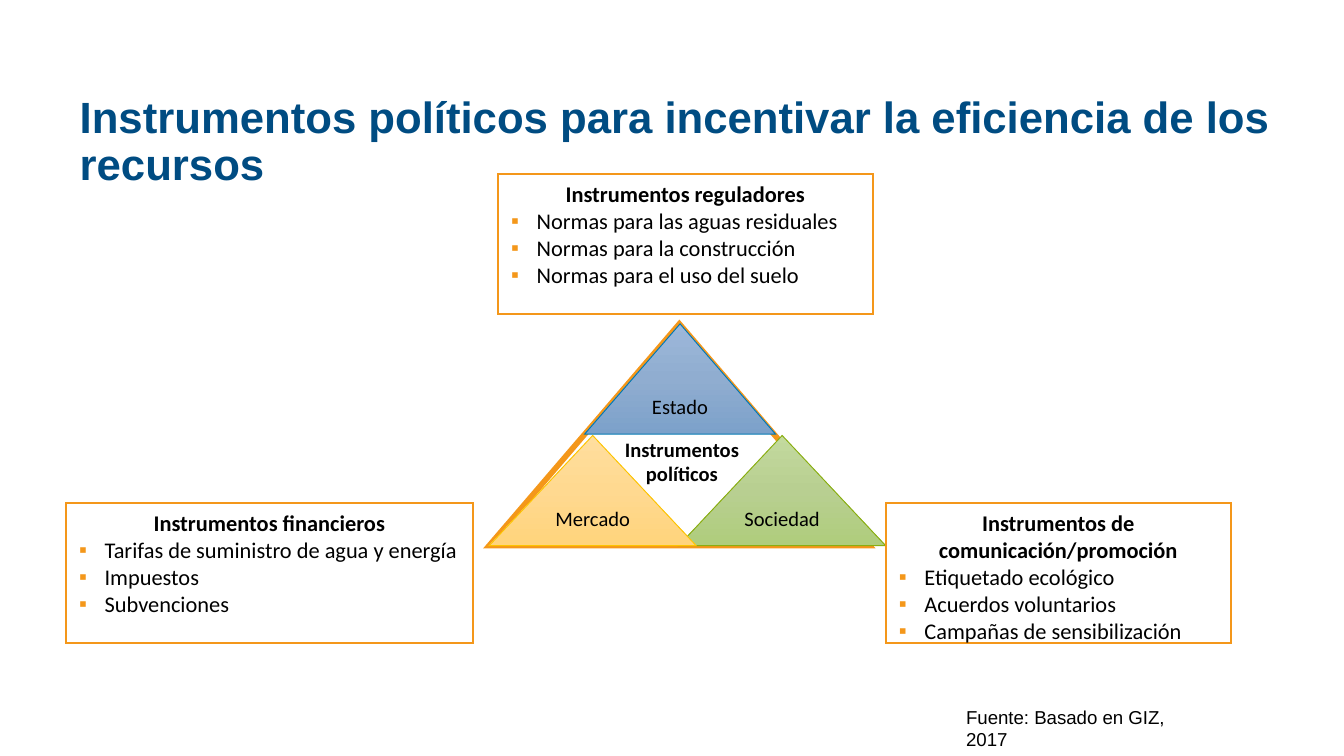
from copy import deepcopy

from lxml import etree
from pptx import Presentation
from pptx import util as u
from pptx.dml.color import RGBColor
from pptx.enum import shapes, text
from pptx.oxml.ns import qn

# Grid of square cells: 100 columns by 56.25 rows
CELL = u.Inches(0.1)
COLUMNS, ROWS = 100, 56.25

WHITE = RGBColor(0xFF, 0xFF, 0xFF)
BLACK = RGBColor(0x00, 0x00, 0x00)
NAVY = RGBColor(0x00, 0x4C, 0x82)
ORANGE = RGBColor(0xF4, 0x97, 0x1A)
BLUE_LINE = RGBColor(0x00, 0x77, 0xB2)
GREEN_LINE = RGBColor(0x89, 0xAE, 0x10)
YELLOW_LINE = RGBColor(0xFD, 0xC4, 0x00)
BLUES = RGBColor(0x9D, 0xB8, 0xDA), RGBColor(0x90, 0xAD, 0xD0), RGBColor(0x7C, 0xA1, 0xCA)
GREENS = RGBColor(0xC3, 0xDA, 0x9E), RGBColor(0xB8, 0xCF, 0x91), RGBColor(0xAF, 0xCD, 0x7C)
YELLOWS = RGBColor(0xFF, 0xDE, 0x9E), RGBColor(0xFF, 0xD9, 0x90), RGBColor(0xFF, 0xD4, 0x7C)

TRIANGLE = shapes.MSO_SHAPE.ISOSCELES_TRIANGLE
RECTANGLE = shapes.MSO_SHAPE.RECTANGLE
LEFT, CENTER = text.PP_ALIGN.LEFT, text.PP_ALIGN.CENTER
TOP, MIDDLE = text.MSO_ANCHOR.TOP, text.MSO_ANCHOR.MIDDLE


def cells(*counts):
    return [round(count * CELL) for count in counts]


def style(paragraph, size, font="Calibri", color=BLACK, bold=False, align=CENTER):
    paragraph.alignment = align
    paragraph.font.size = u.Pt(size)
    paragraph.font.name = font
    paragraph.font.bold = bold
    paragraph.font.color.rgb = color


def add_bullet(paragraph):
    properties = paragraph._p.get_or_add_pPr()
    indent = u.Inches(0.19)
    properties.set("marL", str(indent))
    properties.set("indent", str(-indent))
    color = etree.SubElement(properties, qn("a:buClr"))
    etree.SubElement(color, qn("a:srgbClr"), val=str(ORANGE))
    etree.SubElement(properties, qn("a:buFont"), typeface="Arial")
    etree.SubElement(properties, qn("a:buChar"), char="▪")


def add_label(slide, place, words, size, anchor=TOP, **look):
    label = slide.shapes.add_textbox(*cells(*place))
    frame = label.text_frame
    frame.word_wrap = True
    frame.vertical_anchor = anchor
    frame.text = words
    style(frame.paragraphs[0], size, **look)
    return frame.paragraphs[0]


def add_outlined(slide, kind, place, line_color, line_width):
    shape = slide.shapes.add_shape(kind, *cells(*place))
    shape.shadow.inherit = False
    shape.fill.solid()
    shape.fill.fore_color.rgb = WHITE
    shape.line.color.rgb = line_color
    shape.line.width = u.Pt(line_width)
    # Sharp corners
    outline = shape._element.spPr.find(qn("a:ln"))
    etree.SubElement(outline, qn("a:miter"), lim="800000")
    return shape


def add_actor(slide, place, name, tones, line_color):
    actor = add_outlined(slide, TRIANGLE, place, line_color, 0.5)
    # Three stops, running from top to bottom
    actor.fill.gradient()
    actor.fill.gradient_angle = 270
    stop_list = actor._element.spPr.find(".//" + qn("a:gsLst"))
    stop_list.append(deepcopy(stop_list[-1]))
    for stop, tone, position in zip(actor.fill.gradient_stops, tones, (0, 0.5, 1)):
        stop.color.rgb = tone
        stop.position = position
    frame = actor.text_frame
    frame.margin_left = frame.margin_right = 0
    frame.vertical_anchor = MIDDLE
    frame.text = name
    style(frame.paragraphs[0], 11)


def add_instruments(slide, place, heading, examples):
    frame = add_outlined(slide, RECTANGLE, place, ORANGE, 1).text_frame
    frame.word_wrap = True
    frame.vertical_anchor = TOP
    frame.text = "\n".join([heading, *examples])
    first, *items = frame.paragraphs
    style(first, 12, bold=True)
    for item in items:
        add_bullet(item)
        style(item, 12, align=LEFT)


def main():
    deck = Presentation()
    deck.slide_width, deck.slide_height = cells(COLUMNS, ROWS)
    slide = deck.slides.add_slide(deck.slide_layouts[6])

    # Outer triangle and title
    left, apex, base_top, height = 36.4, 24.1, 32.4, 8.2
    add_outlined(slide, TRIANGLE, (left, apex, 28.3, 16.5), ORANGE, 3)
    title = add_label(slide, (4.95, 7.7, 93.7, 5.9),
                      "Instrumentos políticos para incentivar la eficiencia de los recursos",
                      23.4, MIDDLE, font="Arial", color=NAVY, bold=True, align=LEFT)
    title.line_spacing = 0.9

    # Three actors around the centre
    base = 15.4
    add_actor(slide, (43.5, apex, 14.2, height), "Estado", BLUES, BLUE_LINE)
    add_actor(slide, (left + 14.1, base_top, base, height), "Sociedad", GREENS, GREEN_LINE)
    add_actor(slide, (left, base_top, base, height), "Mercado", YELLOWS, YELLOW_LINE)
    add_label(slide, (44.95, 32, 11.6, 4.7), "Instrumentos políticos", 11, bold=True)

    # Instruments of each actor
    box_height, lower_top = 10.4, 37.43
    add_instruments(slide, (37.04, 12.94, 27.9, box_height), "Instrumentos reguladores",
                    ["Normas para las aguas residuales", "Normas para la construcción",
                     "Normas para el uso del suelo"])
    add_instruments(slide, (4.9, lower_top, 30.3, box_height), "Instrumentos financieros",
                    ["Tarifas de suministro de agua y energía", "Impuestos", "Subvenciones"])
    add_instruments(slide, (65.9, lower_top, 25.7, box_height),
                    "Instrumentos de comunicación/promoción",
                    ["Etiquetado ecológico", "Acuerdos voluntarios", "Campañas de sensibilización"])

    # Source
    add_label(slide, (70.9, 52, 19.7, 2.7), "Fuente: Basado en GIZ, 2017", 10,
              font="Arial", align=LEFT)

    deck.save("out.pptx")


if __name__ == "__main__":
    main()
